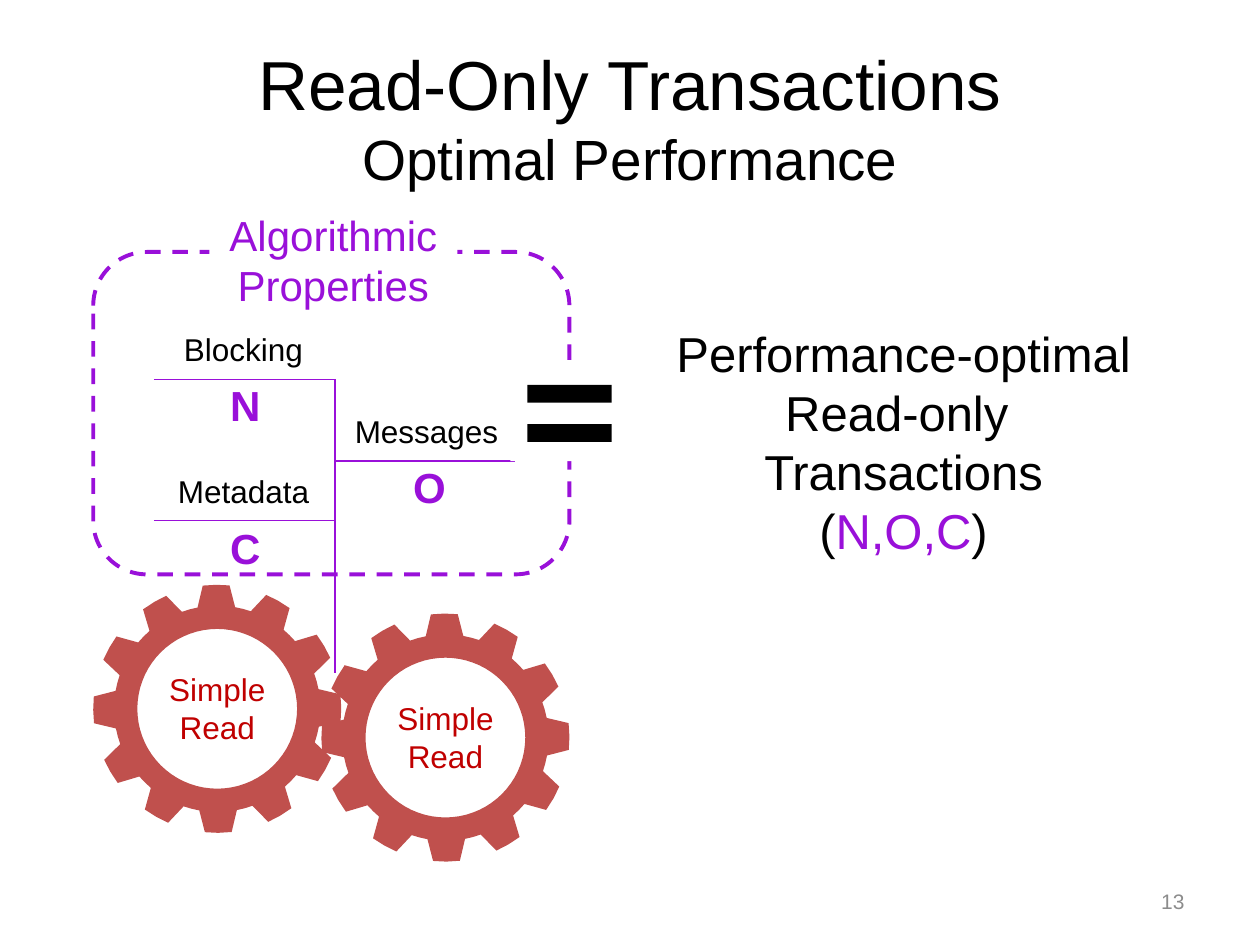
import math
from dataclasses import dataclass

import lxml.etree
import pptx
import pptx.dml.color
import pptx.enum.dml
import pptx.enum.shapes
import pptx.enum.text
import pptx.oxml.ns
import pptx.util

Cm = pptx.util.Cm
RGB = pptx.dml.color.RGBColor.from_string
ALIGN = pptx.enum.text.PP_ALIGN
ANCHOR = pptx.enum.text.MSO_ANCHOR
SHAPE = pptx.enum.shapes.MSO_SHAPE


@dataclass(frozen=True)
class Theme:
    font: str = "Arial"
    black: str = "000000"
    white: str = "FFFFFF"
    purple: str = "9910D9"
    gear: str = "C0504D"
    gear_text: str = "C00000"
    grey: str = "8C8C8C"
    title: float = 39.6
    subtitle: float = 32.4
    answer: float = 28
    heading: float = 24
    label: float = 18
    number: float = 12


theme = Theme()
presentation = pptx.Presentation()
presentation.slide_width = Cm(25.4)
presentation.slide_height = Cm(19.05)
slide = presentation.slides.add_slide(presentation.slide_layouts[6])


def add_run(paragraph, text, size, color, bold=False):
    run = paragraph.add_run()
    run.text = text
    run.font.name = theme.font
    run.font.size = pptx.util.Pt(size)
    run.font.color.rgb = RGB(color)
    run.font.bold = bold


def add_text(box, lines, size, color, bold=False, wrap=True, align=ALIGN.CENTER, anchor=ANCHOR.TOP):
    shape = slide.shapes.add_textbox(*map(Cm, box))
    frame = shape.text_frame
    frame.word_wrap = wrap
    frame.vertical_anchor = anchor
    for index, line in enumerate(lines):
        paragraph = frame.paragraphs[0] if index == 0 else frame.add_paragraph()
        paragraph.alignment = align
        add_run(paragraph, line, size, color, bold)
    return shape


add_text((18.21, 17.65, 5.92, 1.02), ["13"], theme.number, theme.grey,
         align=ALIGN.RIGHT, anchor=ANCHOR.MIDDLE)

tooth_count, tip_radius, root_radius, hole_radius = 12, 2.5, 2.08, 1.61
tooth_profile = [(-10.5, root_radius), (-6.2, tip_radius), (0, tip_radius),
                 (6.2, tip_radius), (10.5, root_radius), (15, root_radius)]
rim = [(tooth * 360 / tooth_count - 0.5 + offset, radius)
       for tooth in range(tooth_count) for offset, radius in tooth_profile]
hole = [(-angle, hole_radius) for angle in range(0, 360, 5)]

gear_centers = [(4.38, 14.29), (8.98, 14.87)]
for center_x, center_y in gear_centers:
    rim_points, hole_points = [
        [(Cm(center_x + radius * math.cos(math.radians(angle))),
          Cm(center_y + radius * math.sin(math.radians(angle)))) for angle, radius in outline]
        for outline in (rim, hole)]
    builder = slide.shapes.build_freeform(*rim_points[0])
    builder.add_line_segments(rim_points[1:])
    builder.move_to(*hole_points[0])
    builder.add_line_segments(hole_points[1:])
    gear = builder.convert_to_shape()
    gear.shadow.inherit = False
    gear.fill.solid()
    gear.fill.fore_color.rgb = RGB(theme.gear)
    gear.line.fill.background()

tree_lines = [
    (6.76, 7.65, 6.76, 13.56),
    (3.1, 7.65, 6.76, 7.65),
    (3.1, 10.49, 6.73, 10.49),
    (6.76, 9.3, 10.39, 9.3),
]
for ends in tree_lines:
    connector = slide.shapes.add_connector(pptx.enum.shapes.MSO_CONNECTOR.STRAIGHT, *map(Cm, ends))
    connector.line.color.rgb = RGB(theme.purple)
    connector.line.width = pptx.util.Pt(1)
    lxml.etree.SubElement(connector._element.spPr, pptx.oxml.ns.qn("a:effectLst"))

for center_x, center_y in gear_centers:
    add_text((center_x - 1.27, center_y - 0.9, 2.54, 1.8), ["Simple", "Read"],
             theme.label, theme.gear_text, wrap=False)

answer = add_text((13.26, 6.4, 9.91, 5.05),
                  ["Performance-optimal", "Read-only ", "Transactions", "("],
                  theme.answer, theme.black)
for text, color in [("N,O,C", theme.purple), (")", theme.black)]:
    add_run(answer.text_frame.paragraphs[-1], text, theme.answer, color)

frame_shape = slide.shapes.add_shape(SHAPE.ROUNDED_RECTANGLE, *map(Cm, (1.88, 5.08, 9.6, 6.5)))
frame_shape.shadow.inherit = False
frame_shape.fill.background()
frame_shape.line.color.rgb = RGB(theme.purple)
frame_shape.line.width = pptx.util.Pt(2.25)
frame_shape.line.dash_style = pptx.enum.dml.MSO_LINE.DASH

equals_sign = [
    ((10.29, 7.42, 2.39, 1.88), theme.white),
    ((10.63, 7.76, 1.7, 0.36), theme.black),
    ((10.63, 8.55, 1.7, 0.36), theme.black),
]
for box, color in equals_sign:
    bar = slide.shapes.add_shape(SHAPE.RECTANGLE, *map(Cm, box))
    bar.shadow.inherit = False
    bar.fill.solid()
    bar.fill.fore_color.rgb = RGB(color)
    bar.line.fill.background()

properties = [
    ("Blocking", "N", 3.07, 6.53),
    ("Metadata", "C", 3.07, 9.4),
    ("Messages", "O", 6.76, 8.18),
]
for label, value, left, top in properties:
    add_text((left, top, 3.68, 1.02), [label], theme.label, theme.black)
    add_text((left + 1.32, top + 1, 1.02, 1.27), [value], theme.heading, theme.purple, bold=True)

title = add_text((1.27, 0.76, 22.86, 3.18), ["Read-Only Transactions"],
                 theme.title, theme.black, anchor=ANCHOR.MIDDLE)
title_paragraph = title.text_frame.paragraphs[0]
title_paragraph.add_line_break()
add_run(title_paragraph, "Optimal Performance", theme.subtitle, theme.black)

heading = add_text((4.22, 4.09, 5, 2.31), ["Algorithmic", "Properties"],
                   theme.heading, theme.purple, wrap=False)
heading.fill.solid()
heading.fill.fore_color.rgb = RGB(theme.white)

presentation.save("out.pptx")
